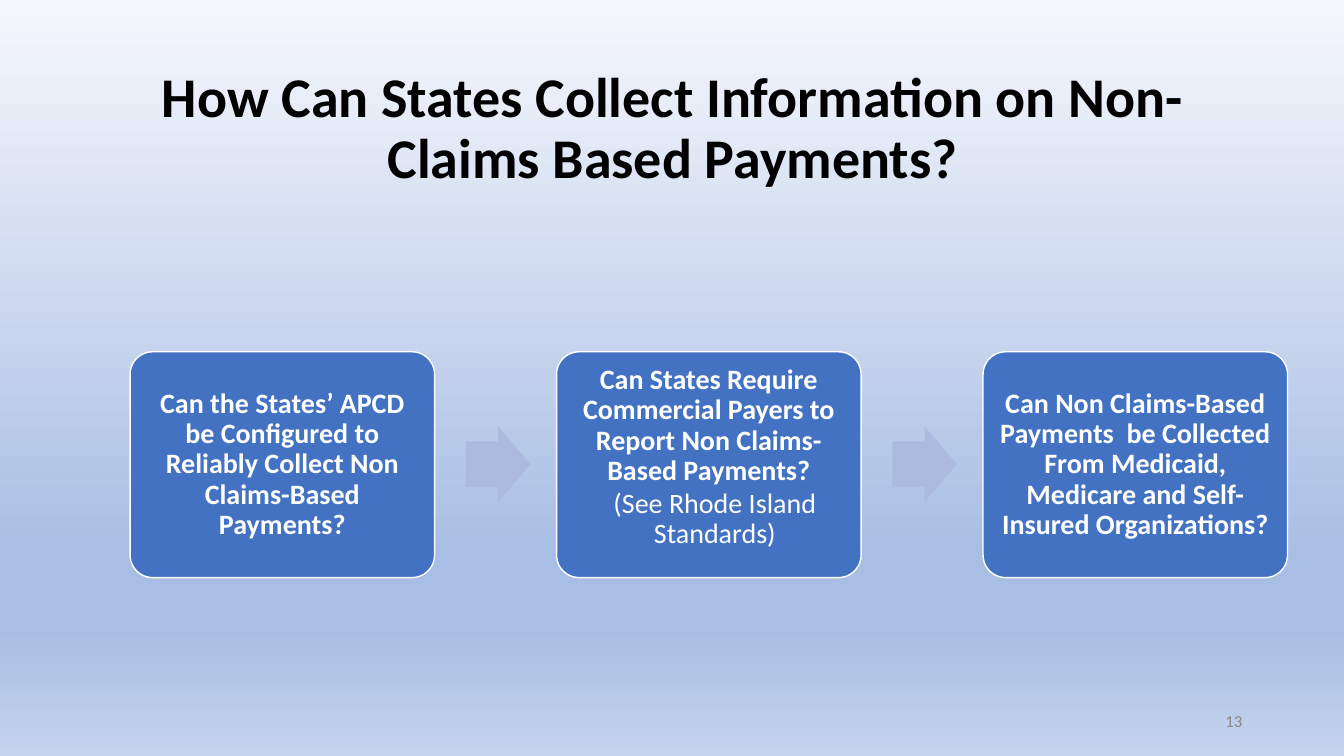
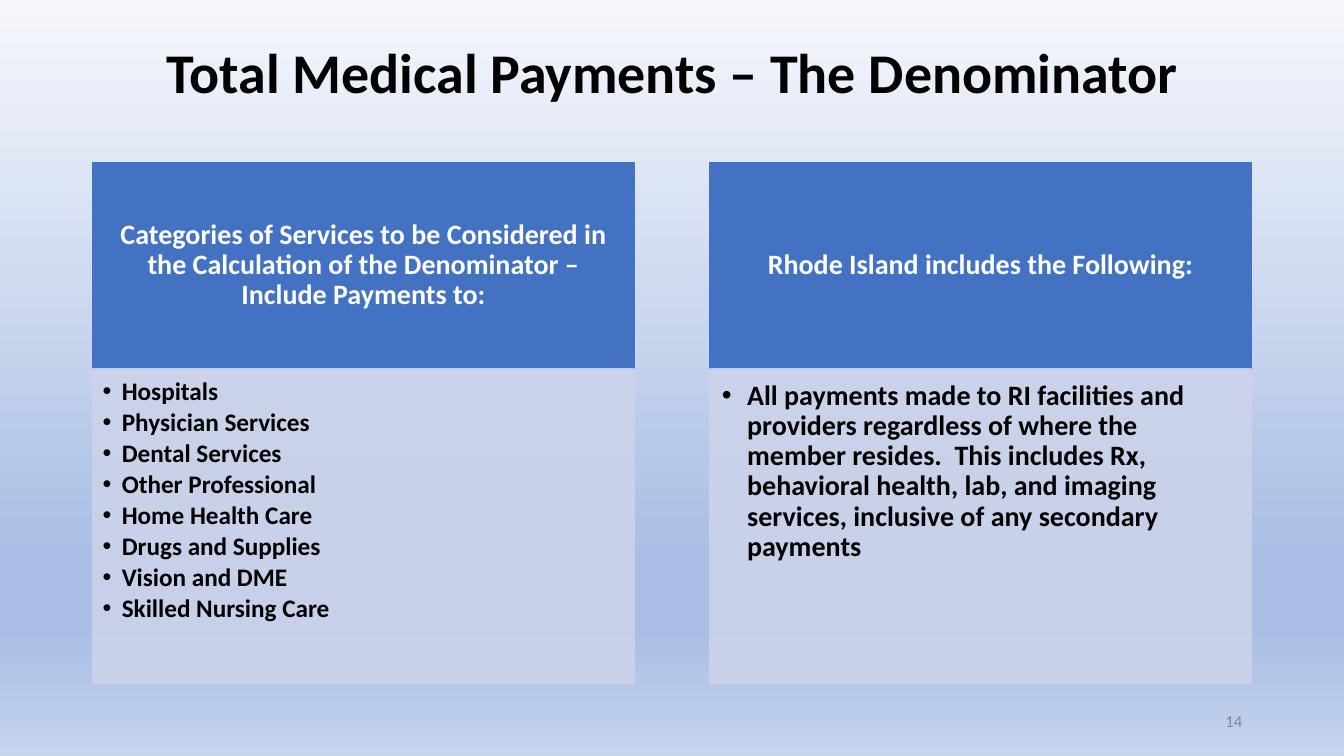
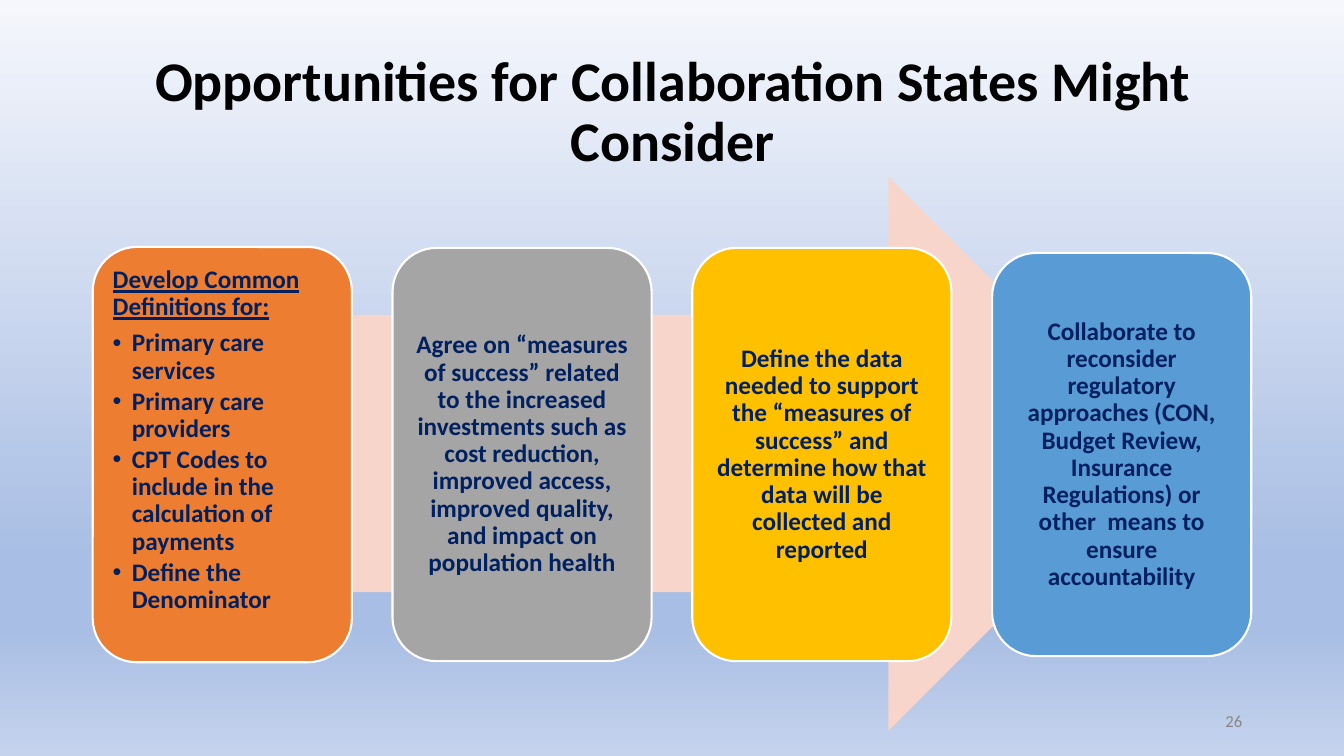
import pptx
import pptx.dml.color
import pptx.enum.shapes
import pptx.enum.text
import pptx.oxml
import pptx.oxml.ns
import pptx.util

Inches = pptx.util.Inches
Pt = pptx.util.Pt
RGB = pptx.dml.color.RGBColor.from_string
SHAPE = pptx.enum.shapes.MSO_SHAPE
ALIGN = pptx.enum.text.PP_ALIGN
ANCHOR = pptx.enum.text.MSO_ANCHOR
NS = pptx.oxml.ns.nsdecls("a")

C = {
    "black": "000000", "white": "FFFFFF", "navy": "002060", "grey": "888888",
    "blue": "4372C3", "arrow": "ABBADE", "panel": "CCD3EA", "peach": "F7D5CB",
    "orange": "ED7D31", "silver": "A5A5A5", "gold": "FFC000", "sky": "599BD5",
}
BACKGROUND = [(0, "F5F7FC"), (74, "A9BEE4"), (83, "A9BEE4"), (100, "C5D3ED")]


def add_shape(s, kind, box, fill, line=None, width=1, adj=(), alpha=None):
    sp = s.shapes.add_shape(kind, *[Inches(v) for v in box])
    sp.shadow.inherit = False
    for i, v in enumerate(adj):
        sp.adjustments[i] = v
    sp.fill.solid()
    sp.fill.fore_color.rgb = RGB(C[fill])
    if line:
        sp.line.color.rgb = RGB(C[line])
        sp.line.width = Pt(width)
    else:
        sp.line.fill.background()
    if alpha:
        for clr in sp._element.spPr.xpath(".//a:srgbClr"):
            clr.append(pptx.oxml.parse_xml(f'<a:alpha {NS} val="{alpha * 1000}"/>'))
    return sp


def write(sp, paras, size, color, bold=True, align=ALIGN.CENTER, anchor=ANCHOR.MIDDLE,
          ins=(0.07, 0.07, 0.07, 0.07), spacing=0.9):
    tf = sp.text_frame
    tf.word_wrap = True
    tf.auto_size = pptx.enum.text.MSO_AUTO_SIZE.NONE
    tf.vertical_anchor = anchor
    for side, v in zip(("left", "top", "right", "bottom"), ins):
        setattr(tf, "margin_" + side, Inches(v))
    for i, (text, opts) in enumerate(paras):
        p = tf.paragraphs[0] if i == 0 else tf.add_paragraph()
        fmt = {"alignment": align, "line_spacing": spacing,
               "space_before": Pt(opts.get("before", 0))}
        for name, v in fmt.items():
            setattr(p, name, v)
        pPr = p._p.get_or_add_pPr()
        if "indent" in opts:
            pPr.set("marL", str(Inches(opts["indent"])))
        if "hang" in opts:
            pPr.set("marL", str(Inches(opts["hang"])))
            pPr.set("indent", str(-Inches(opts["hang"])))
            pPr.append(pptx.oxml.parse_xml(f'<a:buFont {NS} typeface="Arial"/>'))
            pPr.append(pptx.oxml.parse_xml(f'<a:buChar {NS} char="•"/>'))
        r = p.add_run()
        r.text = text
        font = {"name": "Calibri", "size": Pt(size), "bold": opts.get("bold", bold),
                "underline": opts.get("underline", False)}
        for name, v in font.items():
            setattr(r.font, name, v)
        r.font.color.rgb = RGB(C[color])


prs = pptx.Presentation()
prs.slide_width = Inches(13.33)
prs.slide_height = Inches(7.5)

master = prs.slide_master
master.background.fill.gradient()
master.background.fill.gradient_angle = 270
stops = master.element.xpath("./p:cSld/p:bg//a:gsLst")[0]
for gs in list(stops):
    stops.remove(gs)
for pos, color in BACKGROUND:
    stops.append(pptx.oxml.parse_xml(
        f'<a:gs {NS} pos="{pos * 1000}"><a:srgbClr val="{color}"/></a:gs>'))

pages = [
    ("How Can States Collect Information on Non-Claims Based Payments?",
     0.74, 1.1, ANCHOR.MIDDLE, "13"),
    ("Total Medical Payments – The Denominator", 0.4, 1.45, ANCHOR.TOP, "14"),
    ("Opportunities for Collaboration States Might Consider",
     0.4, 1.45, ANCHOR.MIDDLE, "26"),
]
slides = []
for title, top, height, anchor, number in pages:
    s = prs.slides.add_slide(prs.slide_layouts[5])
    sp = s.shapes.title
    place = {"left": 0.92, "top": top, "width": 11.5, "height": height}
    for name, v in place.items():
        setattr(sp, name, Inches(v))
    write(sp, [(title, {})], 40, "black", anchor=anchor, ins=(0.1, 0.05, 0.1, 0.05))
    sp = s.shapes.add_textbox(Inches(9.42), Inches(6.95), Inches(3), Inches(0.4))
    write(sp, [(number, {})], 12, "grey", bold=False, align=ALIGN.RIGHT,
          ins=(0.1, 0.05, 0.1, 0.05), spacing=1.0)
    slides.append(s)
collect, denominator, collaborate = slides

questions = [
    ([("Can the States’ APCD be Configured to Reliably Collect Non Claims-Based Payments?", {})],
     ANCHOR.MIDDLE),
    ([("Can States Require Commercial Payers to Report Non Claims-Based Payments?", {}),
      ("(See Rhode Island Standards)", {"bold": False, "indent": 0.12, "before": 2.1})],
     ANCHOR.TOP),
    ([("Can Non Claims-Based Payments  be Collected From Medicaid, Medicare and "
       "Self-Insured Organizations?", {})], ANCHOR.MIDDLE),
]
step = 4.23
for i, (paras, anchor) in enumerate(questions):
    sp = add_shape(collect, SHAPE.ROUNDED_RECTANGLE, (1.29 + i * step, 3.49, 3.02, 2.24),
                   "blue", "white", adj=(0.1,))
    write(sp, paras, 20, "white", anchor=anchor)
    if i < len(questions) - 1:
        add_shape(collect, SHAPE.RIGHT_ARROW, (4.62 + i * step, 4.23, 0.64, 0.75),
                  "arrow", adj=(0.6, 0.5))

services = ["Hospitals", "Physician Services", "Dental Services", "Other Professional",
            "Home Health Care", "Drugs and Supplies", "Vision and DME",
            "Skilled Nursing Care"]
columns = [
    ("Categories of Services to be Considered in the Calculation of the Denominator – "
     "Include Payments to:", services, 18, 0.19, (0.1, 0.1, 0.14, 0.16)),
    ("Rhode Island includes the Following:",
     ["All payments made to RI facilities and providers regardless of where the member "
      "resides.  This includes Rx, behavioral health, lab, and imaging services, inclusive "
      "of any secondary payments"], 20, 0.25, (0.12, 0.12, 0.16, 0.17)),
]
for i, (heading, items, size, hang, ins) in enumerate(columns):
    left = 0.92 + i * 6.12
    sp = add_shape(denominator, SHAPE.RECTANGLE, (left, 1.61, 5.37, 2.05), "blue", "blue")
    write(sp, [(heading, {})], 20, "white", ins=(0.16, 0.09, 0.16, 0.09))
    sp = add_shape(denominator, SHAPE.RECTANGLE, (left, 3.66, 5.37, 3.12), "panel", "panel",
                   alpha=90)
    paras = [(item, {"hang": hang, "before": 2.7 if j else 0})
             for j, item in enumerate(items)]
    write(sp, paras, size, "black", align=ALIGN.LEFT, anchor=ANCHOR.TOP, ins=ins)

add_shape(collaborate, SHAPE.RIGHT_ARROW, (1.78, 1.75, 9.78, 5.5), "peach", adj=(0.5, 0.5))
definitions = ["Primary care services", "Primary care providers",
               "CPT Codes to include in the calculation of payments",
               "Define the Denominator"]
cards = [
    ("orange", 4.12, [("Develop Common Definitions for:", {"underline": True})]
     + [(d, {"hang": 0.19, "before": 2.7 if j else 6.3}) for j, d in enumerate(definitions)],
     ALIGN.LEFT, ANCHOR.TOP),
    ("silver", 4.1, [("Agree on “measures of success” related to the increased investments "
                      "such as cost reduction, improved access, improved quality, and impact "
                      "on population health", {})], ALIGN.CENTER, ANCHOR.MIDDLE),
    ("gold", 4.1, [("Define the data needed to support the “measures of success” and "
                    "determine how that data will be collected and reported", {})],
     ALIGN.CENTER, ANCHOR.MIDDLE),
    ("sky", 4, [("Collaborate to reconsider regulatory approaches (CON, Budget Review, "
                 "Insurance Regulations) or other  means to ensure accountability", {})],
     ALIGN.CENTER, ANCHOR.MIDDLE),
]
card_w = 2.57
card_step = (11.49 - card_w) / (len(cards) - 1)
for i, (fill, height, paras, align, anchor) in enumerate(cards):
    sp = add_shape(collaborate, SHAPE.ROUNDED_RECTANGLE,
                   (0.92 + i * card_step, 4.51 - height / 2, card_w, height),
                   fill, "white", 1.5, adj=(0.17,))
    write(sp, paras, 18, "navy", align=align, anchor=anchor)

prs.save("out.pptx")
